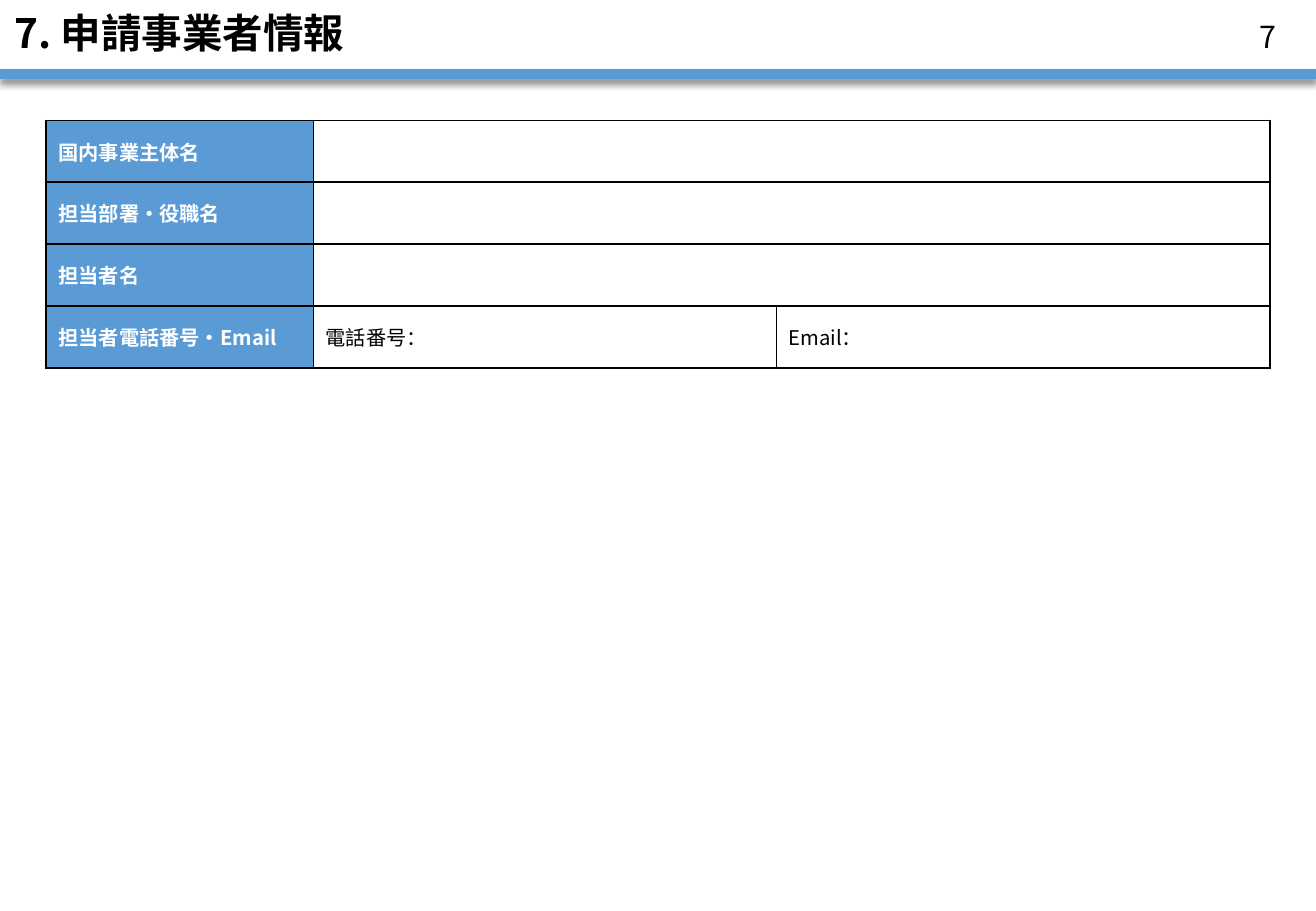
"""Builds the applicant information slide with its contact table."""
from lxml.etree import SubElement
from pptx import Presentation
from pptx.dml.color import RGBColor
from pptx.enum.shapes import MSO_CONNECTOR, MSO_SHAPE
from pptx.enum.text import MSO_ANCHOR, PP_ALIGN
from pptx.oxml import parse_xml
from pptx.oxml.ns import nsdecls, qn
from pptx.util import Inches, Pt

WIDTH, HEIGHT = 10.83, 7.5
BLUE, BLACK, WHITE = "5B9BD5", "000000", "FFFFFF"
COLUMN_WIDTHS = [2.2, 3.81, 4.06]
ROW_HEIGHT = 0.51
ROWS = [
    ["国内事業主体名"],
    ["担当部署・役職名"],
    ["担当者名"],
    ["担当者電話番号・Email", "電話番号：", "Email："],
]


def color(value):
    return RGBColor.from_string(value)


class SlideBuilder:
    """Holds the font and the current slide, and adds styled elements."""

    def __init__(self, slide, font_name):
        self.slide = slide
        self.font_name = font_name

    def style_text(self, text_frame, text, size, text_color, bold=False, align=PP_ALIGN.LEFT):
        text_frame.text = text
        paragraph = text_frame.paragraphs[0]
        paragraph.alignment = align
        for run in paragraph.runs:
            run.font.name = self.font_name
            run.font.size = Pt(size)
            run.font.bold = bold
            run.font.color.rgb = color(text_color)
            east_asian = SubElement(run.font._element, qn("a:ea"))
            east_asian.set("typeface", self.font_name)
        return paragraph

    def title(self, text, height):
        shape = self.slide.shapes.title
        shape.left, shape.top = Inches(0), Inches(0)
        shape.width, shape.height = Inches(WIDTH), Inches(height)
        frame = shape.text_frame
        frame.vertical_anchor = MSO_ANCHOR.MIDDLE
        frame.margin_left = frame.margin_right = Inches(0.12)
        frame.margin_top = frame.margin_bottom = Inches(0.04)
        self.style_text(frame, text, 24, BLACK, bold=True).line_spacing = 0.9

    def rule(self, top):
        line = self.slide.shapes.add_connector(
            MSO_CONNECTOR.STRAIGHT, Inches(0), Inches(top), Inches(WIDTH), Inches(top))
        line.line.color.rgb = color(BLUE)
        line.line.width = Pt(6)
        line._element.spPr.append(parse_xml(
            f'<a:effectLst {nsdecls("a")}><a:outerShdw blurRad="{Pt(4)}" dist="{Pt(3)}" '
            f'dir="5400000" rotWithShape="0"><a:srgbClr val="{BLACK}">'
            '<a:alpha val="40000"/></a:srgbClr></a:outerShdw></a:effectLst>'))

    def page_number(self, text, left, top, width, height):
        shape = self.slide.shapes.add_shape(
            MSO_SHAPE.RECTANGLE, Inches(left), Inches(top), Inches(width), Inches(height))
        shape.shadow.inherit = False
        shape.fill.solid()
        shape.fill.fore_color.rgb = color(WHITE)
        shape.line.fill.background()
        frame = shape.text_frame
        frame.margin_left = frame.margin_right = 0
        frame.vertical_anchor = MSO_ANCHOR.MIDDLE
        self.style_text(frame, text, 18, BLACK, align=PP_ALIGN.CENTER)

    def cell(self, cell, text, is_label):
        properties = cell._tc.get_or_add_tcPr()
        for side in ("lnL", "lnR", "lnT", "lnB"):
            properties.append(parse_xml(
                f'<a:{side} {nsdecls("a")} w="{Pt(1)}"><a:solidFill>'
                f'<a:srgbClr val="{BLACK}"/></a:solidFill></a:{side}>'))
        cell.fill.solid()
        cell.fill.fore_color.rgb = color(BLUE if is_label else WHITE)
        cell.vertical_anchor = MSO_ANCHOR.MIDDLE
        self.style_text(cell.text_frame, text, 12, WHITE if is_label else BLACK, bold=is_label)

    def table(self, rows, left, top):
        table = self.slide.shapes.add_table(
            len(rows), len(COLUMN_WIDTHS), Inches(left), Inches(top),
            Inches(sum(COLUMN_WIDTHS)), Inches(ROW_HEIGHT * len(rows))).table
        table.first_row = table.horz_banding = False
        for column, width in zip(table.columns, COLUMN_WIDTHS):
            column.width = Inches(width)
        for row_index, texts in enumerate(rows):
            table.rows[row_index].height = Inches(ROW_HEIGHT)
            for column_index in range(len(COLUMN_WIDTHS)):
                text = texts[column_index] if column_index < len(texts) else ""
                self.cell(table.cell(row_index, column_index), text, column_index == 0)
            if len(texts) == 1:
                table.cell(row_index, 1).merge(table.cell(row_index, 2))


def main():
    presentation = Presentation()
    presentation.slide_width = Inches(WIDTH)
    presentation.slide_height = Inches(HEIGHT)
    slide = presentation.slides.add_slide(presentation.slide_layouts[5])
    builder = SlideBuilder(slide, "Noto Sans CJK JP")
    builder.rule(0.61)
    builder.title("7. 申請事業者情報", 0.59)
    builder.table(ROWS, 0.38, 0.99)
    builder.page_number("7", 10.24, 0.14, 0.39, 0.31)
    presentation.save("out.pptx")


if __name__ == "__main__":
    main()
